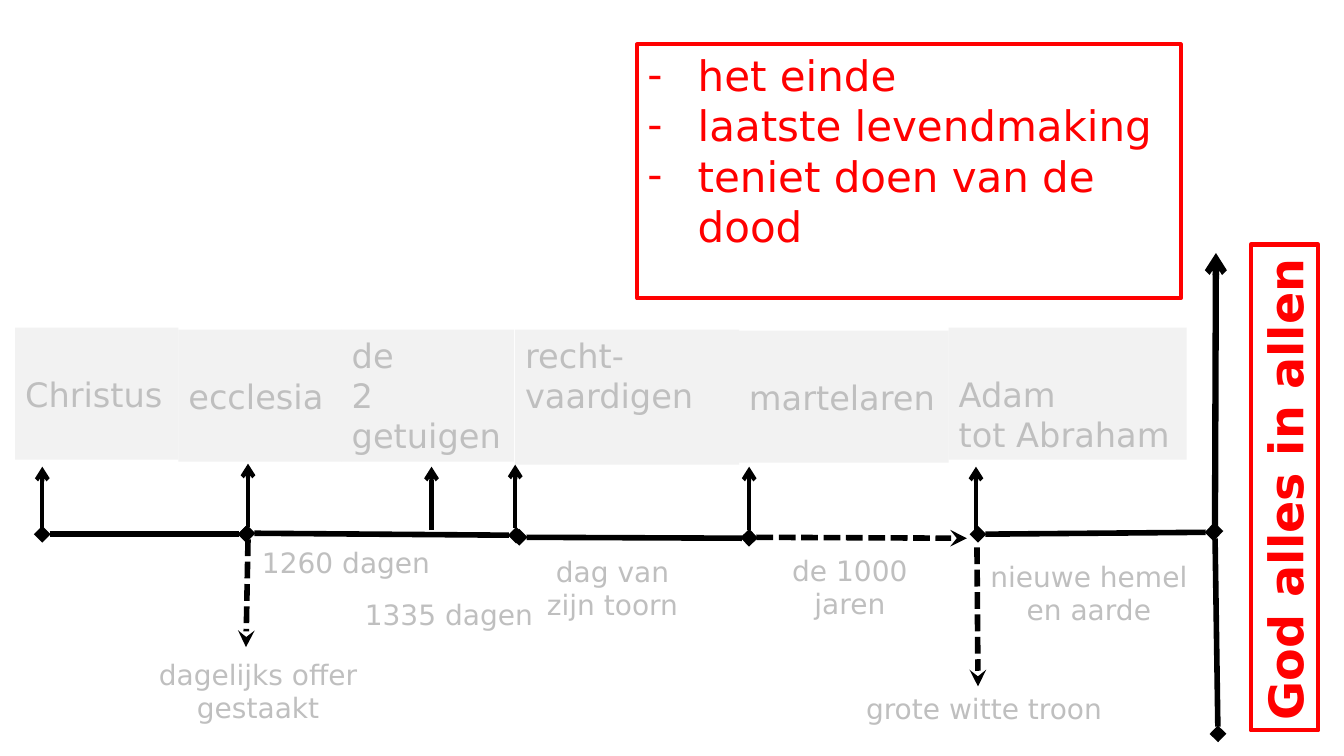
import pptx
import pptx.util
import pptx.dml.color
import pptx.enum.dml
import pptx.enum.shapes
import pptx.enum.text
import pptx.oxml
import pptx.oxml.ns
from pptx.util import Inches

COLORS = {"ink": "000000", "band": "F2F2F2", "muted": "BFBFBF", "accent": "FF0000"}
FONT = "DejaVu Sans"
LEFT = pptx.enum.text.PP_ALIGN.LEFT
CENTER = pptx.enum.text.PP_ALIGN.CENTER


def rgb(name):
    return pptx.dml.color.RGBColor.from_string(COLORS[name])


def apply(obj, values):
    for name, value in values.items():
        setattr(obj, name, value)


def add_xml(parent, tag, **attrs):
    child = pptx.oxml.parse_xml(f"<a:{tag} {pptx.oxml.ns.nsdecls('a')}/>")
    for name, value in attrs.items():
        child.set(name, value)
    parent.append(child)


class Timeline:
    """Draws the elements of a timeline slide in one shared style."""

    def __init__(self, prs):
        self.s = prs.slides.add_slide(prs.slide_layouts[1])

    def fill_text(self, sp, lines, size, color, align=LEFT, bold=False, top=0.05):
        tf = sp.text_frame
        apply(tf, {
            "word_wrap": True,
            "auto_size": pptx.enum.text.MSO_AUTO_SIZE.NONE,
            "vertical_anchor": pptx.enum.text.MSO_ANCHOR.TOP,
            "margin_top": Inches(top),
        })
        for i, line in enumerate(lines):
            p = tf.add_paragraph() if i else tf.paragraphs[0]
            apply(p, {"alignment": align, "space_before": pptx.util.Pt(0)})
            r = p.add_run()
            r.text = line
            apply(r.font, {"name": FONT, "size": pptx.util.Pt(size), "bold": bold})
            r.font.color.rgb = rgb(color)

    def frame(self, sp, x, y, w, h):
        apply(sp, {"left": Inches(x), "top": Inches(y),
                   "width": Inches(w), "height": Inches(h)})
        sp.line.color.rgb = rgb("accent")
        sp.line.width = pptx.util.Pt(3)

    def title(self, text, x, y, w, h):
        sp = self.s.shapes.title
        self.frame(sp, x, y, w, h)
        sp.rotation = 270
        self.fill_text(sp, [text], 34, "accent", bold=True)

    def bullets(self, lines, x, y, w, h):
        sp = self.s.placeholders[1]
        self.frame(sp, x, y, w, h)
        self.fill_text(sp, lines, 30, "accent")
        for p in sp.text_frame.paragraphs:
            pPr = p._p.get_or_add_pPr()
            pPr.set("marL", str(Inches(0.5)))
            pPr.set("indent", str(Inches(-0.5)))
            add_xml(pPr, "buFont", typeface=FONT)
            add_xml(pPr, "buChar", char="-")

    def band(self, lines, x, y, w, h, top):
        sp = self.s.shapes.add_shape(pptx.enum.shapes.MSO_SHAPE.RECTANGLE,
                                     Inches(x), Inches(y), Inches(w), Inches(h))
        sp.shadow.inherit = False
        sp.fill.solid()
        sp.fill.fore_color.rgb = rgb("band")
        sp.line.fill.background()
        self.fill_text(sp, lines, 24, "muted", top=top)

    def label(self, lines, x, y, w, h, align=CENTER):
        sp = self.s.shapes.add_textbox(Inches(x), Inches(y), Inches(w), Inches(h))
        self.fill_text(sp, lines, 20, "muted", align)

    def line(self, x1, y1, x2, y2, width=4, head=None, tail=None, dashed=False):
        sp = self.s.shapes.add_connector(
            pptx.enum.shapes.MSO_CONNECTOR.STRAIGHT,
            Inches(x1), Inches(y1), Inches(x2), Inches(y2))
        sp.line.color.rgb = rgb("ink")
        sp.line.width = pptx.util.Pt(width)
        if dashed:
            sp.line.dash_style = pptx.enum.dml.MSO_LINE.SQUARE_DOT
        spPr = sp._element.spPr
        ln = spPr.find(pptx.oxml.ns.qn("a:ln"))
        for tag, kind in (("headEnd", head), ("tailEnd", tail)):
            if kind:
                add_xml(ln, tag, type=kind)
        add_xml(spPr, "effectLst")


def main():
    prs = pptx.Presentation()
    prs.slide_width, prs.slide_height = Inches(13.33), Inches(7.5)
    t = Timeline(prs)
    t.title("God alles in allen", 10.33, 4.5, 4.82, 0.67)
    t.bullets(["het einde", "laatste levendmaking", "teniet doen van de dood"],
              6.32, 0.44, 5.39, 2.52)

    one_line_down = 0.46
    for lines, x, y, w, h, top in (
        (["Christus"], 0.15, 3.25, 1.62, 1.31, one_line_down),
        (["ecclesia"], 1.77, 3.27, 1.62, 1.31, one_line_down),
        (["recht-", "vaardigen"], 5.11, 3.27, 2.22, 1.34, 0.05),
        (["martelaren"], 7.33, 3.28, 2.08, 1.31, one_line_down),
        (["Adam", "tot Abraham"], 9.41, 3.25, 2.36, 1.31, one_line_down),
        (["de", "2 getuigen"], 3.39, 3.27, 1.71, 1.31, 0.05),
    ):
        t.band(lines, x, y, w, h, top)

    for x1, y1, x2, y2 in (
        (0.42, 5.3, 2.44, 5.3),
        (2.45, 5.29, 5.12, 5.31),
        (5.15, 5.33, 7.43, 5.34),
        (9.7, 5.3, 12.03, 5.28),
        (12.08, 7.28, 12.05, 5.27),
    ):
        t.line(x1, y1, x2, y2, head="diamond", tail="diamond")
    t.line(7.43, 5.33, 9.59, 5.34, head="diamond", tail="stealth", dashed=True)
    t.line(2.46, 5.35, 2.44, 6.42, tail="stealth", dashed=True)
    t.line(9.69, 5.43, 9.7, 6.81, tail="stealth", dashed=True)
    t.line(12.05, 5.29, 12.06, 2.51, width=4.5, tail="arrow")
    for x, y in ((0.42, 5.26), (2.46, 5.23), (4.28, 5.26),
                 (5.11, 5.24), (7.43, 5.26), (9.68, 5.26)):
        t.line(x, y, x, y - 0.63, width=3, tail="arrow")

    t.label(["dagelijks offer", "gestaakt"], 1.07, 6.47, 2.98, 0.77)
    t.label(["1260 dagen"], 2.5, 5.36, 2.56, 0.44, LEFT)
    t.label(["1335 dagen"], 3.52, 5.88, 2.56, 0.44, LEFT)
    t.label(["dag van", "zijn toorn"], 4.44, 5.45, 3.27, 0.77)
    t.label(["de 1000", "jaren"], 7.26, 5.44, 2.34, 0.77)
    t.label(["nieuwe hemel en aarde"], 9.63, 5.5, 2.34, 0.77)
    t.label(["grote witte troon"], 8.27, 6.81, 2.98, 0.44)
    prs.save("out.pptx")


if __name__ == "__main__":
    main()
